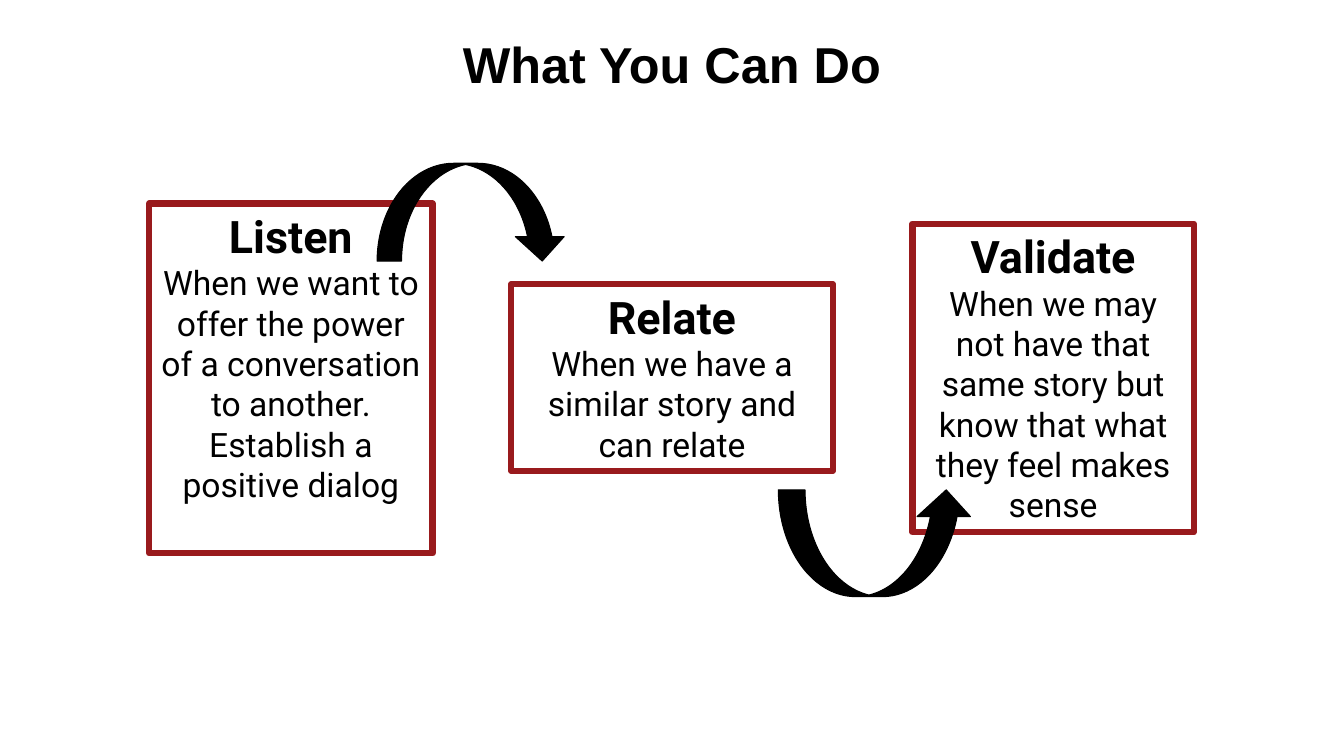
"""Build the "What You Can Do" slide: three boxed steps joined by curved arrows."""
import pptx
import pptx.dml.color
import pptx.enum.shapes
import pptx.enum.text
import pptx.util

Inches = pptx.util.Inches
Pt = pptx.util.Pt
RGBColor = pptx.dml.color.RGBColor
MSO_SHAPE = pptx.enum.shapes.MSO_SHAPE
MSO_ANCHOR = pptx.enum.text.MSO_ANCHOR
PP_ALIGN = pptx.enum.text.PP_ALIGN


class Theme:
    black = RGBColor.from_string("000000")
    border = RGBColor.from_string("991A1D")
    title_font = "Arial"
    body_font = "Roboto"
    title_size = Pt(36)
    heading_size = Pt(32)
    body_size = Pt(24)
    border_width = Pt(4.5)
    arrow_line_width = Pt(0.75)


def format_paragraph(paragraph, name, size, bold):
    paragraph.alignment = PP_ALIGN.CENTER
    paragraph.font.name = name
    paragraph.font.size = size
    paragraph.font.bold = bold
    paragraph.font.color.rgb = Theme.black


def add_outlined_shape(kind, box, color, width):
    shape = slide.shapes.add_shape(kind, *map(Inches, box))
    shape.shadow.inherit = False
    shape.line.color.rgb = color
    shape.line.width = width
    return shape


presentation = pptx.Presentation()
presentation.slide_width = Inches(13.33)
presentation.slide_height = Inches(7.5)
slide = presentation.slides.add_slide(presentation.slide_layouts[5])

title = slide.shapes.title
title.left, title.top = Inches(0), Inches(0.27)
title.width, title.height = Inches(13.33), Inches(0.71)
title.text_frame.text = "What You Can Do"
title.text_frame.vertical_anchor = MSO_ANCHOR.MIDDLE
format_paragraph(title.text_frame.paragraphs[0], Theme.title_font, Theme.title_size, True)

steps = [
    ("Listen", "When we want to offer the power of a conversation to another. "
     "Establish a positive dialog", (1.48, 2.02, 2.81, 3.47)),
    ("Relate", "When we have a similar story and can relate", (5.07, 2.82, 3.19, 1.85)),
    ("Validate", "When we may not have that same story but know that what "
     "they feel makes sense", (9.05, 2.22, 2.79, 3.06)),
]
for heading, description, box in steps:
    step = add_outlined_shape(MSO_SHAPE.RECTANGLE, box, Theme.border, Theme.border_width)
    step.fill.background()
    frame = step.text_frame
    frame.word_wrap = True
    frame.vertical_anchor = MSO_ANCHOR.TOP
    frame.text = f"{heading}\n{description}"
    format_paragraph(frame.paragraphs[0], Theme.body_font, Theme.heading_size, True)
    format_paragraph(frame.paragraphs[1], Theme.body_font, Theme.body_size, False)

arrows = [
    (MSO_SHAPE.CURVED_DOWN_ARROW, (3.74, 1.62, 1.88, 0.97)),
    (MSO_SHAPE.CURVED_UP_ARROW, (7.72, 4.86, 1.93, 1.06)),
]
for kind, box in arrows:
    arrow = add_outlined_shape(kind, box, Theme.black, Theme.arrow_line_width)
    arrow.fill.solid()
    arrow.fill.fore_color.rgb = Theme.black

presentation.save("out.pptx")
